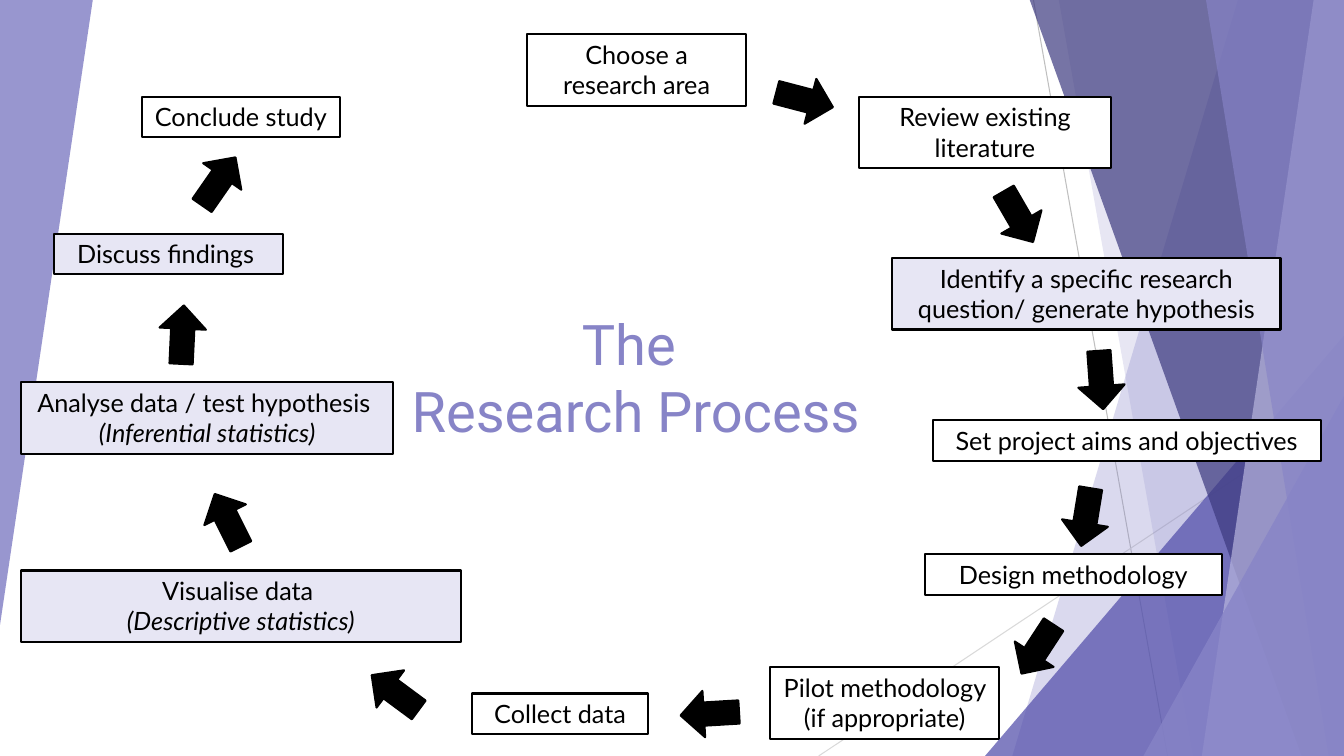
import pptx
import pptx.dml.color
import pptx.enum.dml
import pptx.enum.shapes
import pptx.enum.text
import pptx.oxml
import pptx.oxml.ns
import pptx.util
from pptx.util import Inches

RGBColor = pptx.dml.color.RGBColor
SHAPES = pptx.enum.shapes.MSO_SHAPE

BLACK = RGBColor(0x00, 0x00, 0x00)
WHITE = RGBColor(0xFF, 0xFF, 0xFF)
LAVENDER = RGBColor(0xE7, 0xE6, 0xF4)
LILAC = RGBColor(0xB7, 0xB5, 0xDD)
PURPLE = RGBColor(0x87, 0x84, 0xC7)
VIOLET = RGBColor(0x51, 0x4D, 0xAA)
INDIGO = RGBColor(0x3D, 0x3A, 0x7F)
GREY = RGBColor(0xBF, 0xBF, 0xBF)
LIGHT_GREY = RGBColor(0xD9, 0xD9, 0xD9)

PAGE_WIDTH, PAGE_HEIGHT = 13.33, 7.5
ONE_LINE, TWO_LINES = 0.4, 0.71
ARROW_LENGTH, ARROW_WIDTH = 0.58, 0.46

STEPS = [
    (5.23, 0.34, 2.17, TWO_LINES, WHITE, ["Choose a research area"]),
    (8.52, 0.96, 2.5, TWO_LINES, WHITE, ["Review existing literature"]),
    (8.85, 2.56, 3.85, TWO_LINES, LAVENDER,
     ["Identify a specific research question/ generate hypothesis"]),
    (9.25, 4.17, 3.85, ONE_LINE, WHITE, ["Set project aims and objectives"]),
    (9.17, 5.5, 2.95, ONE_LINE, WHITE, ["Design methodology"]),
    (7.64, 6.62, 2.27, TWO_LINES, WHITE, ["Pilot methodology (if appropriate)"]),
    (4.68, 6.88, 1.75, ONE_LINE, WHITE, ["Collect data"]),
    (0.21, 5.66, 4.36, TWO_LINES, LAVENDER,
     ["Visualise data ", "(Descriptive statistics)"]),
    (0.21, 3.79, 3.69, TWO_LINES, LAVENDER,
     ["Analyse data / test hypothesis ", "(Inferential statistics)"]),
    (0.54, 2.32, 2.27, ONE_LINE, LAVENDER, ["Discuss findings "]),
    (1.41, 0.96, 1.96, ONE_LINE, WHITE, ["Conclude study"]),
]

ARROWS = [
    (7.69, 0.76, 14.7), (9.81, 1.92, 59.9), (10.63, 3.54, 85.8),
    (10.48, 4.9, 99.3), (10, 6.21, 123.2), (6.75, 6.85, 176.6),
    (3.63, 6.64, 216.5), (1.97, 4.93, 243.5), (1.52, 3.09, 272.7),
    (1.88, 1.57, 304.8),
]


def paint(shape, color, opacity=100):
    shape.shadow.inherit = False
    shape.fill.solid()
    shape.fill.fore_color.rgb = color
    shape.line.fill.background()
    if opacity < 100:
        tint = shape.fill._xPr.find(".//" + pptx.oxml.ns.qn("a:srgbClr"))
        alpha = pptx.oxml.parse_xml(
            f'<a:alpha {pptx.oxml.ns.nsdecls("a")} val="{opacity * 1000}"/>')
        tint.append(alpha)


def outline(shape):
    shape.line.color.rgb = BLACK
    shape.line.width = pptx.util.Pt(1.5)


def add_hairline(page, start, end, color):
    line = page.shapes.add_connector(
        pptx.enum.shapes.MSO_CONNECTOR.STRAIGHT,
        Inches(start[0]), Inches(start[1]), Inches(end[0]), Inches(end[1]))
    line.line.color.rgb = color
    line.line.width = pptx.util.Pt(0.75)
    line._element.spPr.append(pptx.oxml.parse_xml(
        f'<a:effectLst {pptx.oxml.ns.nsdecls("a")}/>'))


def add_band(page, top_x, bottom_x, color, opacity):
    top = Inches(-0.01)
    right, bottom = Inches(PAGE_WIDTH), Inches(PAGE_HEIGHT)
    builder = page.shapes.build_freeform(Inches(top_x), top)
    builder.add_line_segments(
        [(right, top), (right, bottom), (Inches(bottom_x), bottom)], close=True)
    paint(builder.convert_to_shape(), color, opacity)


def add_wedge(page, left, top, width, height, color, opacity, rotation=0):
    wedge = page.shapes.add_shape(
        SHAPES.ISOSCELES_TRIANGLE,
        Inches(left), Inches(top), Inches(width), Inches(height))
    wedge.adjustments[0] = 1
    wedge.rotation = rotation
    paint(wedge, color, opacity)


def add_backdrop(page):
    add_hairline(page, (10.25, 0), (11.58, PAGE_HEIGHT), GREY)
    add_hairline(page, (PAGE_WIDTH, 4.03), (8.12, PAGE_HEIGHT), LIGHT_GREY)
    add_band(page, 12.28, 10.04, PURPLE, 30)
    add_band(page, 10.5, 11.83, PURPLE, 20)
    add_wedge(page, 9.77, 3.33, 3.56, 4.17, VIOLET, 72)
    add_band(page, 10.21, 12.91, INDIGO, 70)
    add_band(page, 13.03, 11.92, LILAC, 70)
    add_band(page, 11.96, 13.18, PURPLE, 65)
    add_wedge(page, 11.34, 3.93, 1.99, 3.57, PURPLE, 80)
    add_wedge(page, 0, 0, 0.92, 6.2, PURPLE, 85, rotation=180)


def write_lines(frame, lines, font_name, size, color):
    frame.word_wrap = True
    frame.vertical_anchor = pptx.enum.text.MSO_ANCHOR.TOP
    frame.text = "\n".join(lines)
    for para in frame.paragraphs:
        para.alignment = pptx.enum.text.PP_ALIGN.CENTER
        para.font.name = font_name
        para.font.size = pptx.util.Pt(size)
        para.font.color.rgb = color


def add_step(page, left, top, width, height, color, lines):
    box = page.shapes.add_textbox(
        Inches(left), Inches(top), Inches(width), Inches(height))
    paint(box, color)
    outline(box)
    write_lines(box.text_frame, lines, "Lato", 18, BLACK)
    for para in box.text_frame.paragraphs[1:]:
        para.font.italic = True


def add_arrow(page, left, top, rotation):
    arrow = page.shapes.add_shape(
        SHAPES.RIGHT_ARROW, Inches(left), Inches(top),
        Inches(ARROW_LENGTH), Inches(ARROW_WIDTH))
    arrow.rotation = rotation
    paint(arrow, BLACK)
    outline(arrow)


def set_title(page):
    title = page.shapes.title
    title.left, title.top = Inches(3.91), Inches(3.02)
    title.width, title.height = Inches(4.79), Inches(1.45)
    title.text_frame.auto_size = pptx.enum.text.MSO_AUTO_SIZE.NONE
    write_lines(title.text_frame, ["The ", "Research Process"],
                "Roboto", 40, PURPLE)


def main():
    deck = pptx.Presentation()
    deck.slide_width, deck.slide_height = Inches(PAGE_WIDTH), Inches(PAGE_HEIGHT)
    page = deck.slides.add_slide(deck.slide_layouts.get_by_name("Title Only"))
    set_title(page)
    add_backdrop(page)
    for step in STEPS:
        add_step(page, *step)
    for arrow in ARROWS:
        add_arrow(page, *arrow)
    deck.save("out.pptx")


if __name__ == "__main__":
    main()
